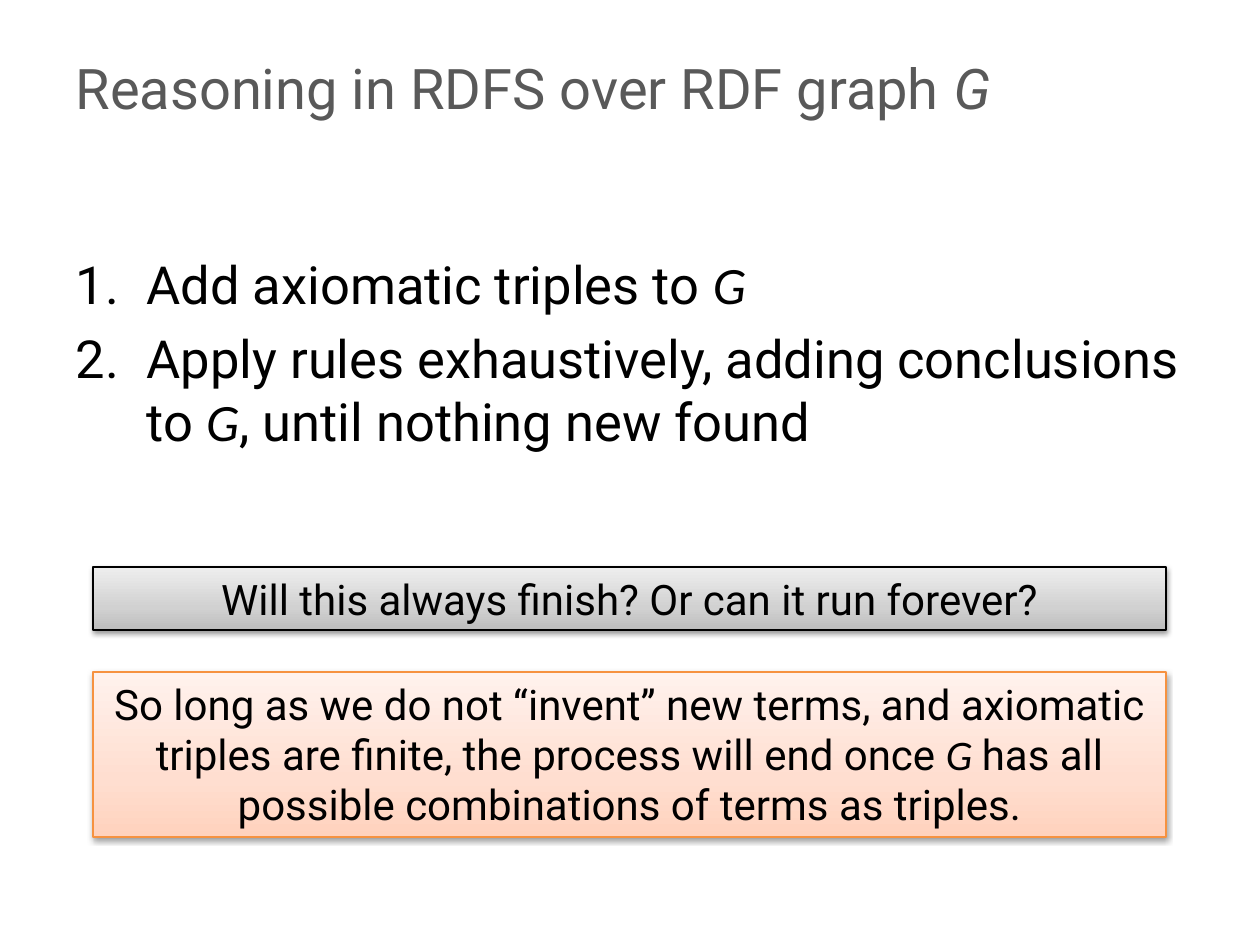
from lxml.etree import SubElement
from pptx import Presentation
from pptx.dml.color import RGBColor
from pptx.enum.shapes import MSO_SHAPE
from pptx.enum.text import MSO_ANCHOR, MSO_AUTO_SIZE, PP_ALIGN
from pptx.oxml import parse_xml
from pptx.oxml.ns import nsdecls, qn
from pptx.util import Pt

EMU_PER_PX = 914400 / 126
BLACK = "000000"
GRAPH = ("G", {"font": "Calibri", "italic": True})


def px(length):
    return round(length * EMU_PER_PX)


def color(hex_string):
    return RGBColor.from_string(hex_string)


def place(shape, box):
    shape.left, shape.top, shape.width, shape.height = map(px, box)


def add_text(para, text, size=24, font="Roboto", ink=BLACK, italic=False):
    span = para.add_run()
    span.text = text
    span.font.size = Pt(size)
    span.font.name = font
    span.font.italic = italic
    span.font.color.rgb = color(ink)


def add_spans(para, spans, **style):
    """Add (text, overrides) pairs that share one base style."""
    for text, overrides in spans:
        add_text(para, text, **{**style, **overrides})


def number_paragraph(para, indent):
    properties = para._p.get_or_add_pPr()
    properties.set("marL", str(px(indent)))
    properties.set("indent", str(-px(indent)))
    bullet_color = SubElement(properties, qn("a:buClr"))
    SubElement(bullet_color, qn("a:srgbClr"), val=BLACK)
    SubElement(properties, qn("a:buFont"), typeface="Roboto")
    SubElement(properties, qn("a:buAutoNum"), type="arabicPeriod")


def fill_title(title, box, spans):
    place(title, box)
    frame = title.text_frame
    frame.vertical_anchor = MSO_ANCHOR.MIDDLE
    para = frame.paragraphs[0]
    para.alignment = PP_ALIGN.LEFT
    add_spans(para, spans, size=32, ink="595959")


def fill_steps(body, box, steps):
    place(body, box)
    frame = body.text_frame
    frame.auto_size = MSO_AUTO_SIZE.NONE
    frame.margin_top = px(84)
    for index, spans in enumerate(steps):
        para = frame.add_paragraph() if index else frame.paragraphs[0]
        para.space_before = Pt(6 if index else 0)
        number_paragraph(para, 71)
        add_spans(para, spans, size=30)


def shade(shape, stops):
    """Give a bottom-to-top gradient and a soft shadow below."""
    stop_xml = "".join(
        f'<a:gs pos="{percent * 1000}"><a:srgbClr val="{tone}"/></a:gs>'
        for percent, tone in stops)
    gradient = parse_xml(
        f'<a:gradFill {nsdecls("a")} rotWithShape="1"><a:gsLst>{stop_xml}</a:gsLst>'
        '<a:lin ang="16200000" scaled="0"/></a:gradFill>')
    properties = shape._element.spPr
    properties.find(qn("a:prstGeom")).addnext(gradient)
    shape.shadow.inherit = False
    properties.find(qn("a:effectLst")).append(parse_xml(
        f'<a:outerShdw {nsdecls("a")} blurRad="40000" dist="20000" dir="5400000" '
        f'rotWithShape="0"><a:srgbClr val="{BLACK}"><a:alpha val="38000"/>'
        '</a:srgbClr></a:outerShdw>'))


def add_callout(page, box, spans, tones, outline):
    callout = page.shapes.add_shape(MSO_SHAPE.RECTANGLE, *map(px, box))
    shade(callout, zip((0, 35, 100), tones))
    callout.line.color.rgb = color(outline)
    callout.line.width = Pt(0.75)
    frame = callout.text_frame
    frame.word_wrap = True
    frame.auto_size = MSO_AUTO_SIZE.SHAPE_TO_FIT_TEXT
    frame.vertical_anchor = MSO_ANCHOR.TOP
    para = frame.paragraphs[0]
    para.alignment = PP_ALIGN.CENTER
    add_spans(para, spans)


def main():
    deck = Presentation()
    deck.slide_width, deck.slide_height = px(1260), px(945)
    page = deck.slides.add_slide(deck.slide_layouts[1])
    title, body = page.placeholders
    fill_title(title, (63, 38, 1134, 98),
               [("Reasoning in RDFS over RDF graph ", {}), ("G", {"italic": True})])
    fill_steps(body, (63, 168, 1134, 677), [
        [("Add axiomatic triples to ", {}), GRAPH],
        [("Apply rules exhaustively, adding conclusions to ", {}), GRAPH,
         (", until nothing new found", {})],
    ])
    add_callout(page, (93, 567, 1073, 63),
                [("Will this always finish? Or can it run forever?", {})],
                ("BDBDBD", "D1D1D1", "EEEEEE"), BLACK)
    add_callout(page, (93, 672, 1073, 165), [
        ("So long as we do not “invent” new terms, and axiomatic triples are "
         "finite, the process will end once ", {}),
        ("G ", GRAPH[1]),
        ("has all possible combinations of terms as triples.", {}),
    ], ("FFD2BD", "FFDED0", "FFF2ED"), "F69240")
    deck.save("out.pptx")


if __name__ == "__main__":
    main()
